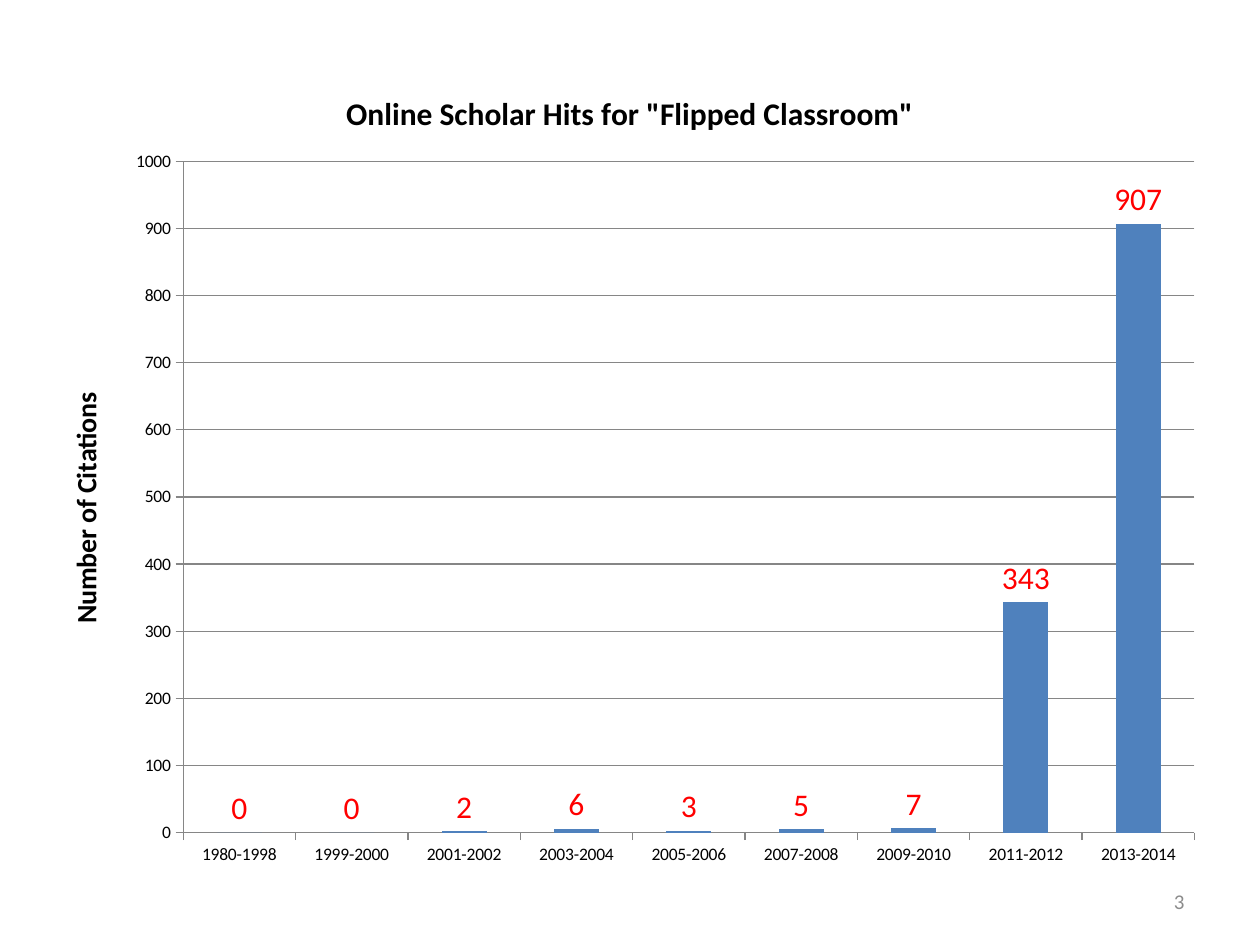
from lxml import etree
from pptx import Presentation
from pptx.chart.data import CategoryChartData
from pptx.dml.color import RGBColor
from pptx.enum.chart import XL_CHART_TYPE, XL_LABEL_POSITION, XL_TICK_MARK
from pptx.enum.text import MSO_ANCHOR, PP_ALIGN
from pptx.oxml.ns import qn
from pptx.util import Pt

COLUMN = XL_CHART_TYPE.COLUMN_CLUSTERED
OUTSIDE_END = XL_LABEL_POSITION.OUTSIDE_END
TICK_OUT = XL_TICK_MARK.OUTSIDE
TICK_NONE = XL_TICK_MARK.NONE
RIGHT = PP_ALIGN.RIGHT
MIDDLE = MSO_ANCHOR.MIDDLE

BLACK, GRAY, LINE, BLUE, RED = "000000", "8C8C8C", "868686", "4F81BD", "FF0000"
PERIODS = ["1980-1998", "1999-2000", "2001-2002", "2003-2004", "2005-2006",
           "2007-2008", "2009-2010", "2011-2012", "2013-2014"]
HITS = [0, 0, 2, 6, 3, 5, 7, 343, 907]


def color(value):
    return RGBColor.from_string(value)


class SlideBuilder:
    """Holds the typeface and the current slide, and adds styled elements."""

    def __init__(self, slide, typeface):
        self.slide = slide
        self.typeface = typeface

    def style(self, font, size, value, bold=False):
        font.name = self.typeface
        font.size = Pt(size)
        font.bold = bold
        font.color.rgb = color(value)

    def title(self, owner, text, size):
        frame = owner.text_frame
        frame.text = text
        self.style(frame.paragraphs[0].runs[0].font, size, BLACK, bold=True)

    def axis_line(self, line):
        line.color.rgb = color(LINE)
        line.width = Pt(0.75)

    def plot_layout(self, chart, **fractions):
        plot_area = chart.plots[0]._element.getparent()
        layout = plot_area.find(qn("c:layout"))
        if layout is None:
            layout = etree.Element(qn("c:layout"))
            plot_area.insert(0, layout)
        manual = etree.SubElement(layout, qn("c:manualLayout"))
        settings = {"layoutTarget": "inner", "xMode": "edge", "yMode": "edge", **fractions}
        for name, value in settings.items():
            etree.SubElement(manual, qn(f"c:{name}")).set("val", str(value))

    def column_chart(self, left, top, width, height, title, axis_title, categories, values):
        data = CategoryChartData()
        data.categories = categories
        data.add_series("Series 1", values)
        chart = self.slide.shapes.add_chart(
            COLUMN, Pt(left), Pt(top), Pt(width), Pt(height), data).chart
        self.style(chart.font, 10, BLACK)
        chart.has_legend = False
        self.title(chart.chart_title, title, 18)
        self.title(chart.value_axis.axis_title, axis_title, 16)
        for axis in (chart.category_axis, chart.value_axis):
            axis.major_tick_mark = TICK_OUT
            axis.minor_tick_mark = TICK_NONE
            self.axis_line(axis.format.line)
        chart.value_axis.minimum_scale = 0
        chart.value_axis.maximum_scale = 1000
        chart.value_axis.major_unit = 100
        self.axis_line(chart.value_axis.major_gridlines.format.line)
        plot = chart.plots[0]
        plot.gap_width = 150
        plot.vary_by_categories = False
        series = plot.series[0]
        series.format.fill.solid()
        series.format.fill.fore_color.rgb = color(BLUE)
        labels = series.data_labels
        labels.show_value = True
        labels.position = OUTSIDE_END
        self.style(labels.font, 18, RED)
        self.plot_layout(chart, x=0.12, y=0.12, w=0.86, h=0.82)

    def text(self, left, top, width, height, text, size, value):
        frame = self.slide.shapes.add_textbox(
            Pt(left), Pt(top), Pt(width), Pt(height)).text_frame
        frame.word_wrap = True
        frame.vertical_anchor = MIDDLE
        frame.text = text
        paragraph = frame.paragraphs[0]
        paragraph.alignment = RIGHT
        self.style(paragraph.runs[0].font, size, value)


def main():
    presentation = Presentation()
    presentation.slide_width = Pt(720)
    presentation.slide_height = Pt(540)
    slide = presentation.slides.add_slide(presentation.slide_layouts[6])
    builder = SlideBuilder(slide, "Calibri")
    builder.column_chart(24, 36, 672, 468, 'Online Scholar Hits for "Flipped Classroom"',
                         "Number of Citations", PERIODS, HITS)
    builder.text(516, 500.5, 168, 28.75, "3", 12, GRAY)
    presentation.save("out.pptx")


if __name__ == "__main__":
    main()
